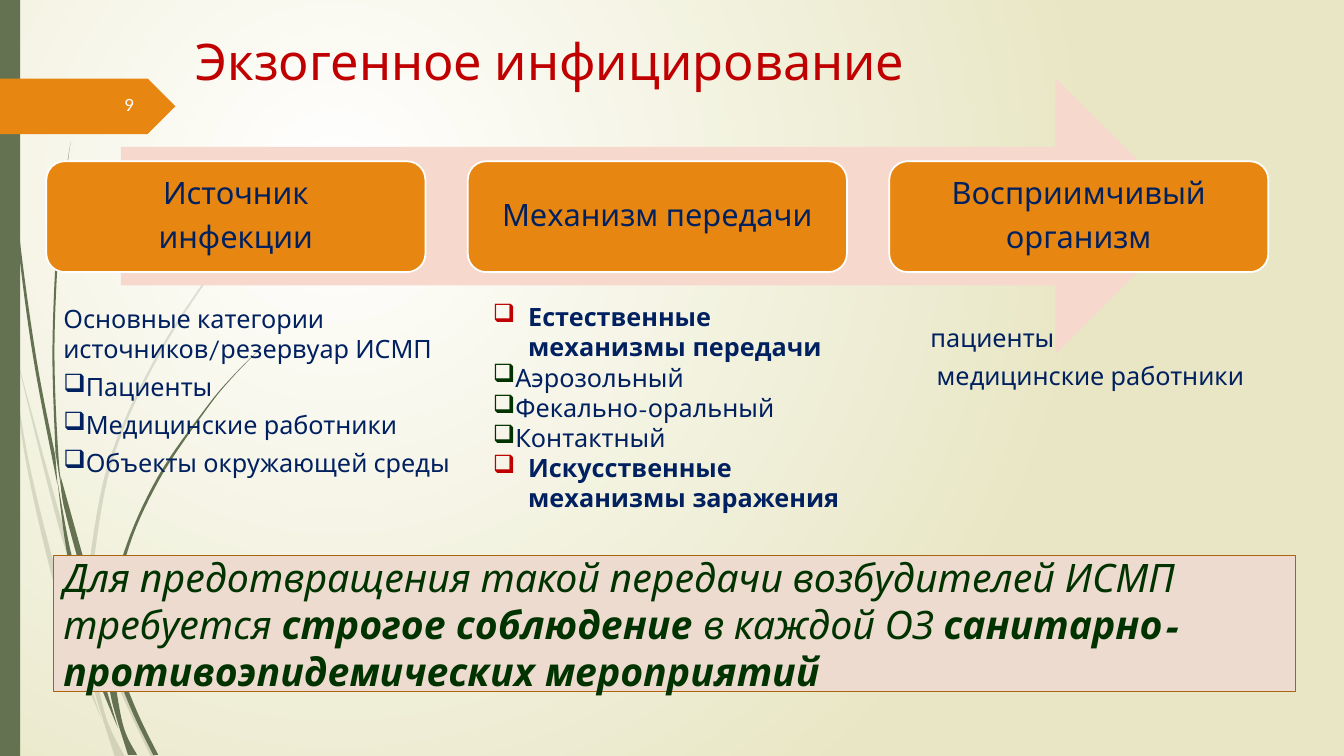
from dataclasses import dataclass

from lxml import etree
from pptx import Presentation
from pptx import util as u
from pptx.dml.color import RGBColor
from pptx.enum import shapes, text
from pptx.oxml.ns import qn

PX = 9144  # 100 px to the inch
SLIDE_W, SLIDE_H = 1333, 750


@dataclass(frozen=True)
class Theme:
    font: str = "League Spartan"
    number_font: str = "Lato"
    moss: str = "647252"
    sand: str = "E8E6C4"
    white: str = "FFFFFF"
    orange: str = "E78712"
    arrow: str = "F6D9CC"
    navy: str = "002060"
    red: str = "C00000"
    green: str = "003300"
    note_fill: str = "EDDBCF"
    note_line: str = "AB640D"
    title: int = 36
    note: int = 28
    card: int = 22
    body: int = 18
    number: int = 12


T = Theme()
TITLE = "Экзогенное инфицирование"
PAGE = "9"
CARDS = [["Источник", "инфекции"], ["Механизм передачи"], ["Восприимчивый", "организм"]]
# Columns: box, space before as a share of the type size, lines of (text, bullet colour, bold)
COLUMNS = [
    ((53, 296, 439, 189), 0.3, [
        ("Основные категории источников/резервуар ИСМП", None, False),
        ("Пациенты", T.navy, False),
        ("Медицинские работники", T.navy, False),
        ("Объекты окружающей среды", T.navy, False)]),
    ((479, 294, 395, 222), 0, [
        ("Естественные механизмы передачи", T.red, True),
        ("Аэрозольный", T.green, False),
        ("Фекально-оральный", T.green, False),
        ("Контактный", T.green, False),
        ("Искусственные механизмы заражения", T.red, True)]),
    ((913, 315, 348, 80), 0.3, [
        ("пациенты", None, False),
        (" медицинские работники", None, False)]),
]
NOTE = [
    ("Для предотвращения такой передачи возбудителей ИСМП требуется ", False),
    ("строгое соблюдение ", True),
    ("в каждой ОЗ ", False),
    ("санитарно-противоэпидемических мероприятий", True),
]
# Blades of grass: (one edge, the other edge on the way back)
PALE_BLADES = [
    ([(0, 282), (9, 322), (11, 350)], [(10, 344), (0, 299)]),
    ([(14, 345), (58, 522), (84, 599)], [(85, 586), (62, 520), (14, 345)]),
    ([(88, 596), (127, 692), (155, 751)], [(150, 751), (123, 694), (88, 610)]),
    ([(11, 350), (31, 469), (70, 619), (101, 714)],
     [(101, 714), (65, 621), (28, 470), (11, 350)]),
    ([(84, 599), (87, 646), (93, 683), (114, 751)],
     [(124, 751), (105, 711), (91, 646), (88, 608)]),
    ([(312, 153), (268, 198), (229, 245), (160, 349), (110, 462), (88, 596)],
     [(85, 584), (107, 461), (158, 348), (228, 244), (268, 197), (312, 153)]),
]
DARK_BLADES = [
    ([(3, 0), (7, 110), (17, 233), (33, 355), (57, 481)],
     [(55, 453), (36, 355), (19, 232), (8, 109), (4, 0)]),
    ([(60, 472), (64, 505), (88, 592), (106, 645)], [(106, 631), (93, 590), (60, 472)]),
    ([(110, 641), (136, 706), (157, 749)], [(152, 749), (132, 708), (111, 656)]),
    ([(57, 477), (72, 556), (98, 657), (117, 722)],
     [(111, 708), (93, 659), (68, 557), (57, 477)]),
    ([(70, 141), (63, 193), (58, 245), (54, 349), (58, 453), (64, 505)],
     [(55, 449), (52, 349), (56, 245), (62, 193), (70, 141)]),
    ([(260, 344), (231, 374), (205, 406), (158, 476), (125, 552), (110, 641)],
     [(106, 631), (122, 551), (156, 474), (204, 405), (231, 373), (260, 344)]),
    ([(106, 645), (110, 691), (127, 749)], [(136, 749), (122, 719), (111, 656)]),
]


def rgb(value):
    return RGBColor.from_string(value)


def emu(*lengths):
    return [u.Emu(round(n * PX)) for n in lengths]


def paint(sp, fill, line=None):
    sp.shadow.inherit = False
    sp.fill.solid()
    sp.fill.fore_color.rgb = rgb(fill)
    if line:
        sp.line.color.rgb = rgb(line)
        sp.line.width = u.Pt(1.25)
    else:
        sp.line.fill.background()


def add_shape(s, kind, box, fill, line=None):
    sp = s.shapes.add_shape(kind, *emu(*box))
    paint(sp, fill, line)
    return sp


def style(p, size, color, font=T.font, align=text.PP_ALIGN.LEFT):
    p.alignment = align
    p.font.size, p.font.name = u.Pt(size), font
    p.font.color.rgb = rgb(color)


def bullet(p, color, hanging):
    pPr = p._p.get_or_add_pPr()
    if hanging:
        pPr.set("marL", str(35 * PX))
        pPr.set("indent", str(-35 * PX))
    clr = etree.Element(qn("a:buClr"))
    etree.SubElement(clr, qn("a:srgbClr"), val=color)
    char = etree.Element(qn("a:buChar"), char="❑")
    pPr.find(qn("a:defRPr")).addprevious(clr)
    clr.addnext(char)


def smooth(pts, steps=8):
    """Points along a Catmull-Rom curve that passes through pts."""
    ends = [pts[0], *pts, pts[-1]]
    curve = [pts[0]]
    for a, b, c, d in zip(ends, ends[1:], ends[2:], ends[3:]):
        for t in (i / steps for i in range(1, steps + 1)):
            curve.append(tuple(
                b[k] + t / 2 * (c[k] - a[k] + t * (2 * a[k] - 5 * b[k] + 4 * c[k] - d[k]
                                + t * (3 * b[k] - a[k] - 3 * c[k] + d[k]))) for k in (0, 1)))
    return curve


def add_blade(s, edges, opacity):
    first, *rest = [emu(*pt) for edge in edges for pt in smooth(edge)]
    builder = s.shapes.build_freeform(*first, scale=1.0)
    builder.add_line_segments(rest, close=True)
    sp = builder.convert_to_shape()
    paint(sp, T.moss)
    if opacity < 100:
        clr = sp._element.spPr.find(qn("a:solidFill"))[0]
        etree.SubElement(clr, qn("a:alpha"), val=str(opacity * 1000))


def add_background(s):
    fill = s.background.fill
    fill.gradient()
    for stop, color, position in zip(fill.gradient_stops, (T.white, T.sand), (0, 1)):
        stop.color.rgb, stop.position = rgb(color), position
    grad = s.element.find(".//" + qn("a:gradFill"))
    circle = etree.Element(qn("a:path"), {"path": "circle"})
    etree.SubElement(circle, qn("a:fillToRect"), l="50000", t="50000", r="100000", b="100000")
    grad.replace(grad.find(qn("a:lin")), circle)


def add_column(s, box, gap, lines):
    tf = s.shapes.add_textbox(*emu(*box)).text_frame
    tf.word_wrap = True
    for i, (line, mark, bold) in enumerate(lines):
        p = tf.add_paragraph() if i else tf.paragraphs[0]
        p.text = line
        style(p, T.body, T.navy)
        p.font.bold = bold
        if i and gap:
            p.space_before = u.Pt(gap * T.body)
        if mark:
            bullet(p, mark, hanging=bold)


def main():
    prs = Presentation()
    prs.slide_width, prs.slide_height = emu(SLIDE_W, SLIDE_H)
    s = prs.slides.add_slide(prs.slide_layouts[5])
    kinds = shapes.MSO_SHAPE
    add_background(s)
    for blades, opacity in ((PALE_BLADES, 20), (DARK_BLADES, 100)):
        for edges in blades:
            add_blade(s, edges, opacity)
    add_shape(s, kinds.RECTANGLE, (0, 0, 20, SLIDE_H), T.moss)
    add_shape(s, kinds.PENTAGON, (0, 78, 174, 55), T.orange)

    title = s.shapes.title
    title.left, title.top, title.width, title.height = emu(184, 25, 1094, 108)
    title.text_frame.text = TITLE
    title.text_frame.vertical_anchor = text.MSO_ANCHOR.TOP
    style(title.text_frame.paragraphs[0], T.title, T.red)

    tf = s.shapes.add_textbox(*emu(58, 86, 85, 40)).text_frame
    tf.text, tf.vertical_anchor = PAGE, text.MSO_ANCHOR.MIDDLE
    tf.word_wrap = True
    style(tf.paragraphs[0], T.number, T.white, T.number_font, text.PP_ALIGN.RIGHT)
    tf.paragraphs[0].line_spacing = 0.8

    add_shape(s, kinds.RIGHT_ARROW, (120, 77, 1064, 275), T.arrow)
    for i, lines in enumerate(CARDS):
        tf = add_shape(s, kinds.ROUNDED_RECTANGLE, (46 + 418 * i, 160, 376, 110),
                       T.orange, T.white).text_frame
        tf.text = "\n".join(lines)
        for p in tf.paragraphs:
            style(p, T.card, T.navy, align=text.PP_ALIGN.CENTER)
            p.line_spacing, p.space_after = 0.9, u.Pt(0.35 * T.card)
    for column in COLUMNS:
        add_column(s, *column)

    tf = add_shape(s, kinds.RECTANGLE, (53, 551, 1232, 135), T.note_fill, T.note_line).text_frame
    p = tf.paragraphs[0]
    style(p, T.note, T.green)
    p.font.italic = True
    for words, bold in NOTE:
        r = p.add_run()
        r.text, r.font.bold = words, bold
    prs.save("out.pptx")


if __name__ == "__main__":
    main()
